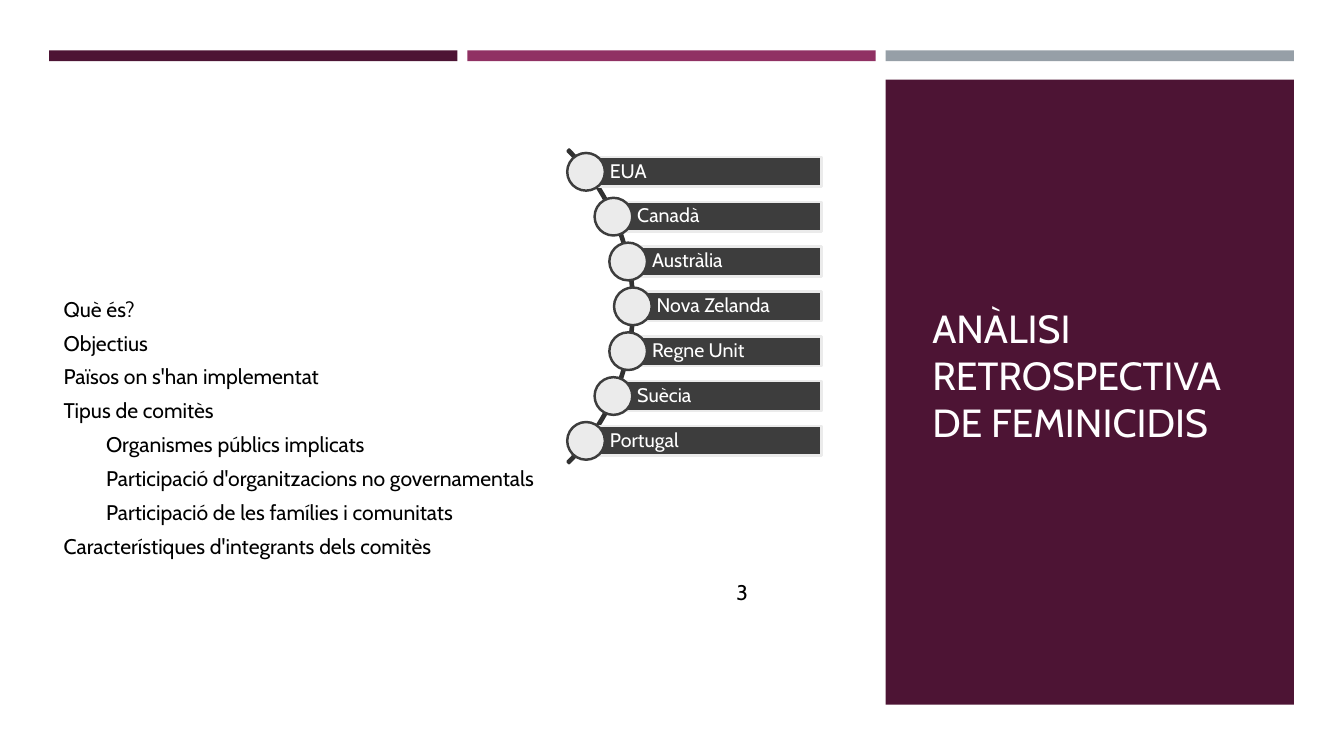
import math
from pptx import Presentation
from pptx import util as u
from pptx.dml.color import RGBColor
from pptx.enum import shapes, text

FONT = "Cabin"
PLUM = "4D1434"
DARK = "3D3D3D"
LIGHT = "EBEBEB"
COLUMN_LEFT, COLUMN_STEP, COLUMN_WIDTH = 1.24, 10.54, 10.29
TOPICS = [
    ("Què és?", 0),
    ("Objectius", 0),
    ("Països on s'han implementat", 0),
    ("Tipus de comitès", 0),
    ("Organismes públics implicats", 1),
    ("Participació d'organitzacions no governamentals", 1),
    ("Participació de les famílies i comunitats", 1),
    ("Característiques d'integrants dels comitès", 0),
]
COUNTRIES = ["EUA", "Canadà", "Austràlia", "Nova Zelanda",
             "Regne Unit", "Suècia", "Portugal"]


def rgb(value):
    return RGBColor.from_string(value)


def place(sp, left, top, width, height):
    sp.left, sp.top, sp.width, sp.height = map(u.Cm, (left, top, width, height))


def add_shape(s, kind, box, fill=None, line=None):
    sp = s.shapes.add_shape(kind, *map(u.Cm, box))
    sp.shadow.inherit = False
    if fill:
        sp.fill.solid()
        sp.fill.fore_color.rgb = rgb(fill)
    else:
        sp.fill.background()
    if line:
        sp.line.color.rgb = rgb(line)
        sp.line.width = u.Pt(1.75)
    else:
        sp.line.fill.background()
    return sp


def style(p, size, color, after=0, spacing=1.0):
    p.font.name = FONT
    p.font.size = u.Pt(size)
    p.font.color.rgb = rgb(color)
    p.alignment = text.PP_ALIGN.LEFT
    p.line_spacing = spacing
    p.space_before = u.Pt(0)
    p.space_after = u.Pt(after)


def setup_frame(tf, anchor=text.MSO_ANCHOR.MIDDLE):
    tf.word_wrap = True
    tf.auto_size = text.MSO_AUTO_SIZE.NONE
    tf.vertical_anchor = anchor


def add_title(s):
    sp = s.shapes.title
    place(sp, 23.24, 2.9, 8.48, 13.08)
    setup_frame(sp.text_frame)
    sp.text_frame.text = "ANÀLISI RETROSPECTIVA DE FEMINICIDIS"
    style(sp.text_frame.paragraphs[0], 28, "FFFEFF")


def add_topics(s):
    sp = s.placeholders[1]
    place(sp, 1.35, 6.55, 18.16, 8.43)
    tf = sp.text_frame
    setup_frame(tf)
    tf.text = "\n".join(topic for topic, level in TOPICS)
    for p, (topic, level) in zip(tf.paragraphs, TOPICS):
        p.level = level
        style(p, 15.1, "000000", after=6)
        pPr = p._p.get_or_add_pPr()
        pPr.set("marL", str(u.Cm(1.07 * level)))
        pPr.set("indent", "0")
        bullet = pPr.makeelement(
            "{http://schemas.openxmlformats.org/drawingml/2006/main}buNone", {})
        pPr.find("{*}spcAft").addnext(bullet)


def add_number(s):
    sp = s.shapes.add_textbox(*map(u.Cm, (18.31, 14.48, 2.49, 0.86)))
    tf = sp.text_frame
    setup_frame(tf, text.MSO_ANCHOR.TOP)
    tf.text = "3"
    style(tf.paragraphs[0], 15.1, "000000", after=6)


def add_panels(s):
    for i, color in enumerate([PLUM, "903163", "969FA7"]):
        left = COLUMN_LEFT + i * COLUMN_STEP
        add_shape(s, shapes.MSO_SHAPE.RECTANGLE,
                  (left, 1.27, COLUMN_WIDTH, 0.27), color)
    panel = add_shape(s, shapes.MSO_SHAPE.RECTANGLE,
                      (COLUMN_LEFT + 2 * COLUMN_STEP, 2.01, COLUMN_WIDTH, 15.75), PLUM)
    s.shapes.title._element.addprevious(panel._element)


def add_countries(s):
    arc = add_shape(s, shapes.MSO_SHAPE.BLOCK_ARC, (4.8, 2.13, 11.18, 11.18),
                    line="313131")
    for i, value in enumerate([189, 27, 0.005]):
        arc.adjustments[i] = value

    center_x, center_y, radius = 10.49, 7.72, 5.46
    pitch, dot, bar, right = 1.13, 0.95, 0.75, 20.71
    for i, country in enumerate(COUNTRIES):
        dy = (i - len(COUNTRIES) // 2) * pitch
        x = center_x + math.sqrt(radius ** 2 - dy ** 2)
        y = center_y + dy
        sp = add_shape(s, shapes.MSO_SHAPE.RECTANGLE,
                       (x, y - bar / 2, right - x, bar), DARK, LIGHT)
        tf = sp.text_frame
        setup_frame(tf)
        tf.margin_left = u.Cm(0.6)
        tf.margin_top = tf.margin_right = tf.margin_bottom = u.Cm(0.1)
        tf.text = country
        style(tf.paragraphs[0], 14, "FFFFFF", spacing=0.9)
        add_shape(s, shapes.MSO_SHAPE.OVAL,
                  (x - dot / 2, y - dot / 2, dot, dot), LIGHT, DARK)


def main():
    prs = Presentation()
    prs.slide_width, prs.slide_height = u.Cm(33.87), u.Cm(19.05)
    s = prs.slides.add_slide(prs.slide_layouts[1])
    add_panels(s)
    add_title(s)
    add_topics(s)
    add_number(s)
    add_countries(s)
    prs.save("out.pptx")


if __name__ == "__main__":
    main()
